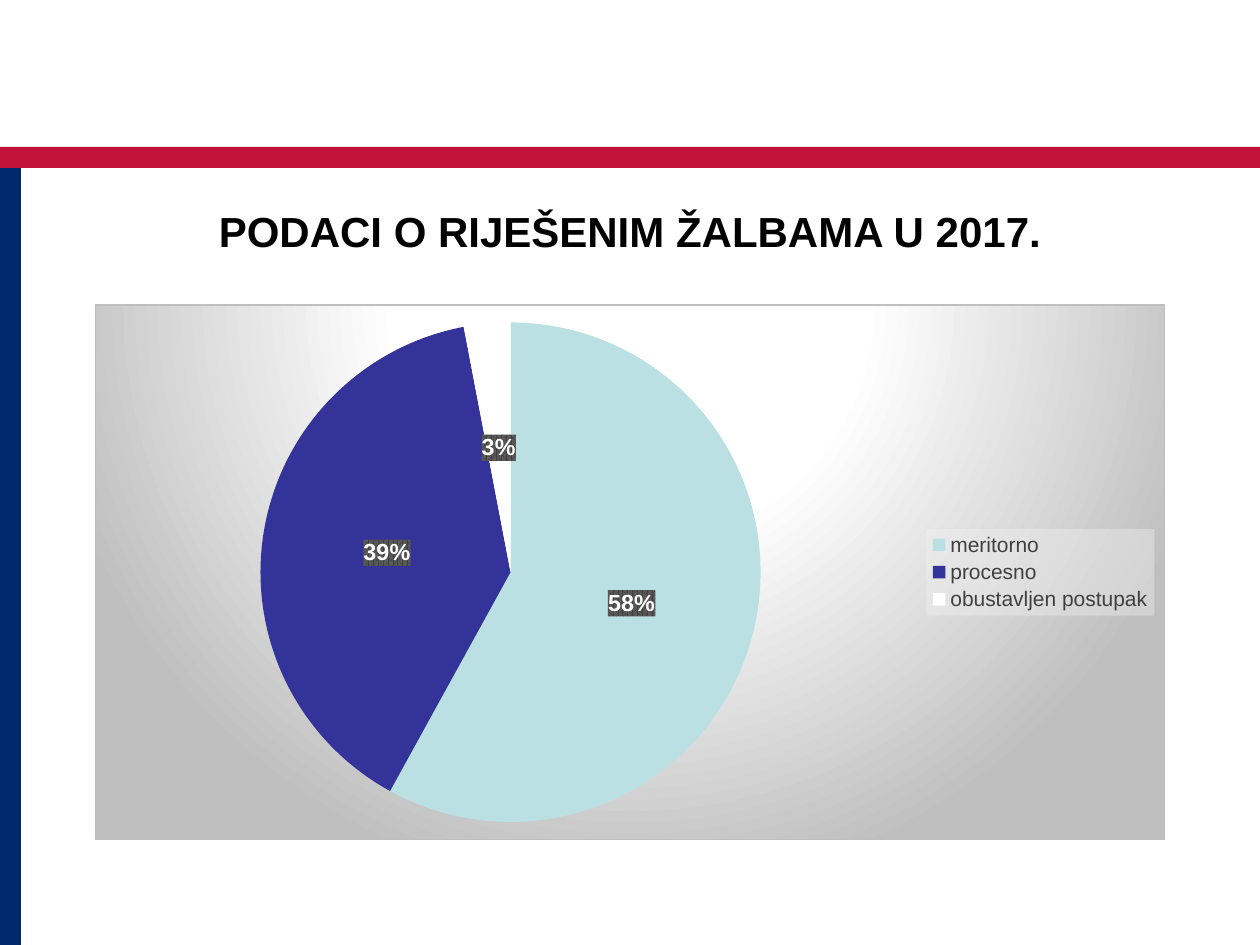
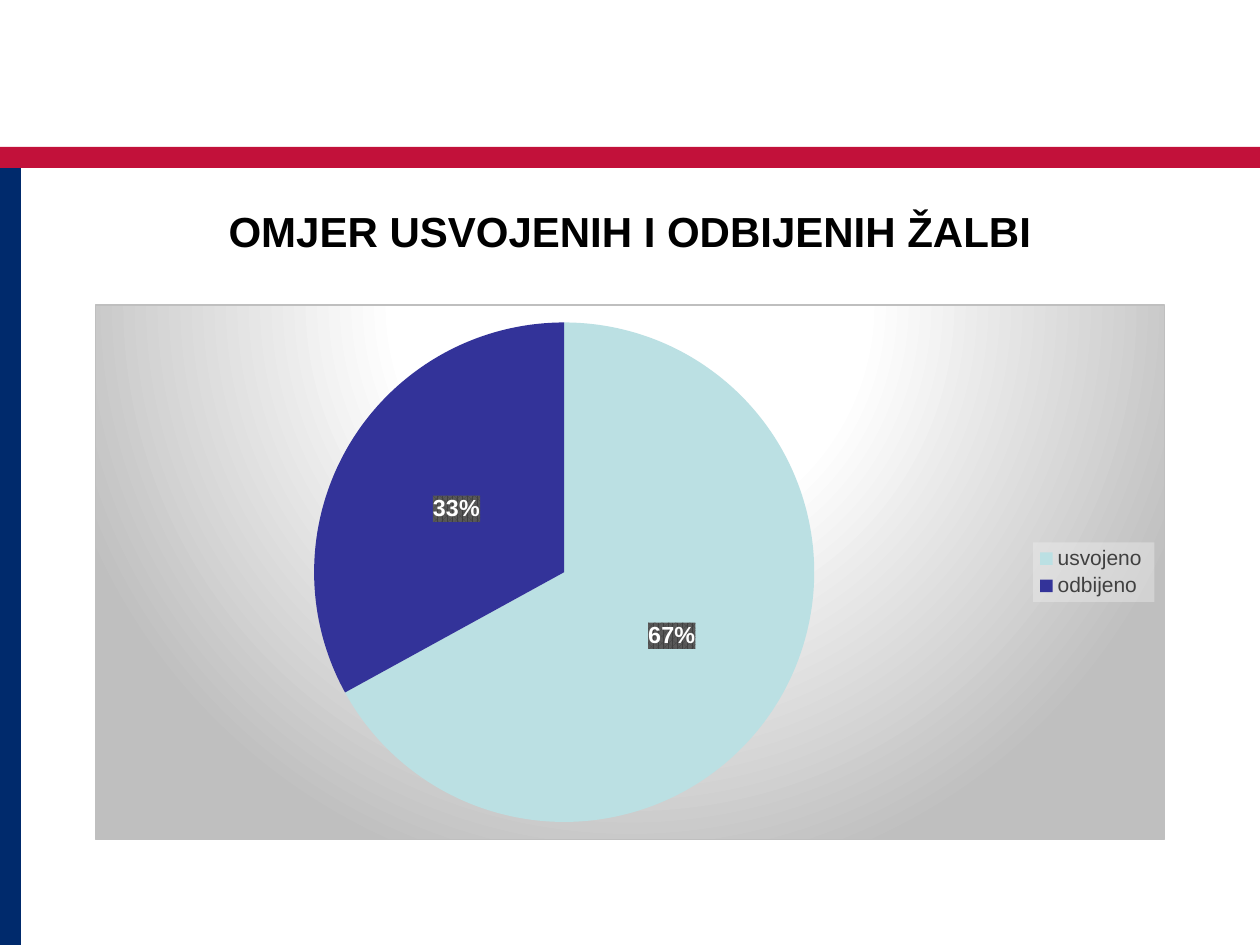
import pptx
import pptx.chart.data
import pptx.dml.color
import pptx.enum.chart
import pptx.enum.shapes
import pptx.enum.text
import pptx.oxml
import pptx.oxml.ns
import pptx.util

HUES = {
    "red": "C2113A", "navy": "002A6C", "black": "000000", "white": "FFFFFF",
    "aqua": "BBE0E3", "indigo": "333399", "gray": "BFBFBF",
    "dark": "404040", "mid": "595959", "pale": "F2F2F2",
}
SLICES = ["aqua", "indigo", "white"]
COLS, ROWS = 60, 45
FRAME = (4.5, 14.5, 51, 25.5)
HEAD = (4.5, 9.5, 51, 4)
BANDS = [("red", (0, 7, 60, 1)), ("navy", (0, 8, 1, 37))]
DATA = [
    ("PODACI O RIJEŠENIM ŽALBAMA U 2017.",
     [("meritorno", 58), ("procesno", 39), ("obustavljen postupak", 3)]),
    ("OMJER USVOJENIH I ODBIJENIH ŽALBI",
     [("usvojeno ", 67), ("odbijeno", 33)]),
]


def tint(name, extra=""):
    return f'<a:srgbClr val="{HUES[name]}">{extra}</a:srgbClr>'


def stop(place, name):
    return f'<a:gs pos="{place}000">{tint(name)}</a:gs>'


STOPS = stop(0, "white") + stop(39, "white") + stop(100, "gray")
GLOW = (
    f'<a:gradFill><a:gsLst>{STOPS}</a:gsLst><a:path path="circle">'
    '<a:fillToRect l="50000" t="-80000" r="50000" b="180000"/></a:path></a:gradFill>'
    '<a:ln w="9525"><a:solidFill>' + tint("gray") + '</a:solidFill></a:ln>'
)
VEIL = '<a:solidFill>' + tint("pale", '<a:alpha val="39000"/>') + '</a:solidFill>'
WEAVE = (
    '<a:pattFill prst="pct75"><a:fgClr>' + tint("dark") + '</a:fgClr>'
    '<a:bgClr>' + tint("mid") + '</a:bgClr></a:pattFill>'
)


class Deck:
    def __init__(self):
        self.show = pptx.Presentation()
        self.show.slide_width = pptx.util.Inches(10)
        self.show.slide_height = pptx.util.Inches(7.5)
        self.base = self.show.slide_layouts[5]
        self.slide = None

    def box(self, area):
        wide = self.show.slide_width / COLS
        high = self.show.slide_height / ROWS
        return [round(part * unit) for part, unit in zip(area, (wide, high) * 2)]

    def hue(self, name):
        return pptx.dml.color.RGBColor.from_string(HUES[name])

    def style(self, font, size, name, bold=False):
        font.name = "Arial"
        font.size = pptx.util.Pt(size)
        font.bold = bold
        font.color.rgb = self.hue(name)

    def page(self):
        self.slide = self.show.slides.add_slide(self.base)

    def band(self, name, area):
        shape = self.slide.shapes.add_shape(
            pptx.enum.shapes.MSO_SHAPE.RECTANGLE, *self.box(area))
        shape.shadow.inherit = False
        shape.fill.solid()
        shape.fill.fore_color.rgb = self.hue(name)
        shape.line.fill.background()
        self.base.shapes._spTree.append(shape._element)

    def title(self, text):
        head = self.slide.shapes.title
        head.left, head.top, head.width, head.height = self.box(HEAD)
        frame = head.text_frame
        frame.word_wrap = True
        frame.vertical_anchor = pptx.enum.text.MSO_ANCHOR.TOP
        line = frame.paragraphs[0]
        line.alignment = pptx.enum.text.PP_ALIGN.CENTER
        run = line.add_run()
        run.text = text
        self.style(run.font, 24, "black", True)

    def paint(self, node, fill):
        spaces = pptx.oxml.ns.nsdecls("c", "a")
        look = pptx.oxml.parse_xml(f"<c:spPr {spaces}>{fill}</c:spPr>")
        node.find(pptx.oxml.ns.qn("c:txPr")).addprevious(look)

    def pie(self, parts):
        data = pptx.chart.data.CategoryChartData()
        data.categories = [name for name, _ in parts]
        data.add_series("Series 1", [value for _, value in parts])
        chart = self.slide.shapes.add_chart(
            pptx.enum.chart.XL_CHART_TYPE.PIE, *self.box(FRAME), data).chart
        chart.has_title = False
        self.style(chart.font, 10, "black")
        self.paint(chart._chartSpace, GLOW)
        self.key(chart)
        plot = chart.plots[0]
        plot.vary_by_categories = True
        for spot, (name, _) in enumerate(zip(SLICES, parts)):
            form = plot.series[0].points[spot].format
            form.fill.solid()
            form.fill.fore_color.rgb = self.hue(name)
            form.line.fill.background()
        self.tags(plot.series[0].data_labels)

    def key(self, chart):
        chart.has_legend = True
        key = chart.legend
        key.position = pptx.enum.chart.XL_LEGEND_POSITION.RIGHT
        key.include_in_layout = False
        self.style(key.font, 12, "dark")
        self.paint(key._element, VEIL)

    def tags(self, tags):
        tags.show_percentage = True
        tags.show_value = False
        tags.number_format = "0%"
        tags.number_format_is_linked = False
        tags.position = pptx.enum.chart.XL_LABEL_POSITION.CENTER
        self.style(tags.font, 13.3, "white", True)
        self.paint(tags._element, WEAVE)


def main():
    deck = Deck()
    for spot, (title, parts) in enumerate(DATA):
        deck.page()
        if spot == 0:
            for name, area in BANDS:
                deck.band(name, area)
        deck.title(title)
        deck.pie(parts)
    deck.show.save("out.pptx")


if __name__ == "__main__":
    main()
